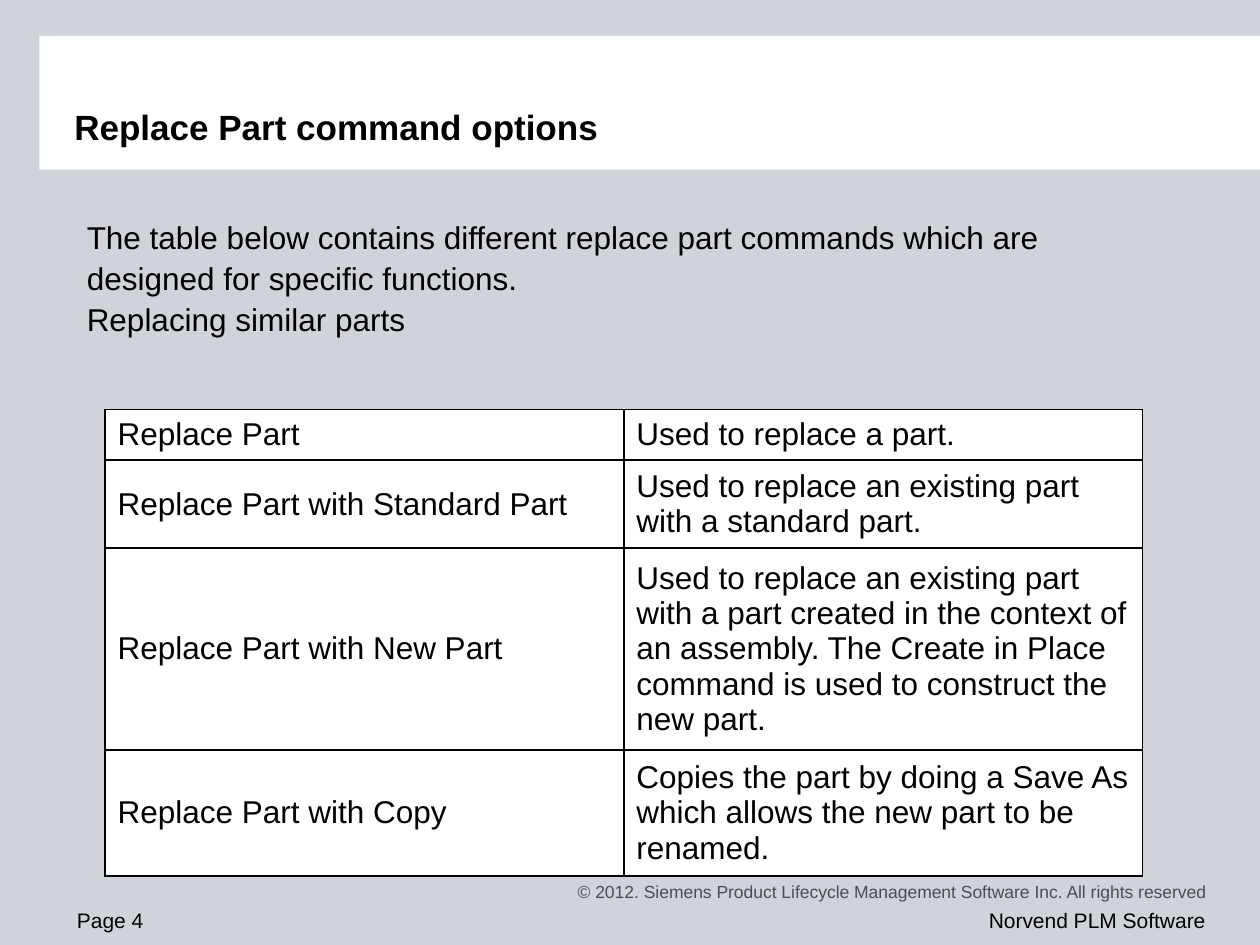
from lxml import etree
from pptx import Presentation
from pptx.dml.color import RGBColor
from pptx.enum import shapes, text
from pptx.oxml import ns
from pptx.util import Pt

BACKGROUND = RGBColor(0xD0, 0xD3, 0xDA)
BAND = RGBColor(0xFE, 0xFF, 0xFF)
WHITE = RGBColor(0xFF, 0xFF, 0xFF)
BLACK = RGBColor(0, 0, 0)
SLATE = RGBColor(0x46, 0x4F, 0x59)

INTRO = [
    "The table below contains different replace part commands which are designed for specific functions.",
    "Replacing similar parts",
]
COMMANDS = [
    ("Replace Part", "Used to replace a part.", 27.5),
    ("Replace Part with Standard Part",
     "Used to replace an existing part with a standard part.", 47.5),
    ("Replace Part with New Part",
     "Used to replace an existing part with a part created in the context of an assembly. "
     "The Create in Place command is used to construct the new part.", 108),
    ("Replace Part with Copy",
     "Copies the part by doing a Save As which allows the new part to be renamed.", 67.5),
]


def style(paragraph, size, color=BLACK, bold=False):
    """Set the font of a whole paragraph."""
    font = paragraph.font
    font.name, font.size, font.bold = "Arial", Pt(size), bold
    font.color.rgb = color


def add_text(slide, box, lines, size, color=BLACK, bold=False, inset=(0, 0),
             anchor=text.MSO_ANCHOR.BOTTOM, align=text.PP_ALIGN.LEFT, spacing=1.0):
    """Add a wrapped text box with one paragraph for each line."""
    frame = slide.shapes.add_textbox(*map(Pt, box)).text_frame
    frame.word_wrap = True
    frame.vertical_anchor = anchor
    frame.margin_left = frame.margin_right = Pt(inset[0])
    frame.margin_top = frame.margin_bottom = Pt(inset[1])
    frame.text = "\n".join(lines)
    for paragraph in frame.paragraphs:
        paragraph.alignment = align
        paragraph.line_spacing = spacing
        style(paragraph, size, color, bold)


def add_header(slide, left, top, width, height):
    """Add the white band and the title on it."""
    band = slide.shapes.add_shape(
        shapes.MSO_SHAPE.RECTANGLE, Pt(left), Pt(top), Pt(width), Pt(height))
    band.shadow.inherit = False
    band.fill.solid()
    band.fill.fore_color.rgb = BAND
    band.line.fill.background()
    add_text(slide, (left + 20, top + 0.5, 484, 63.5),
             ["Replace Part command options"], 20, bold=True)


def add_borders(cell):
    """Draw a black line on the four sides of a cell."""
    properties = cell._tc.get_or_add_tcPr()
    for index, side in enumerate(("lnL", "lnR", "lnT", "lnB")):
        line = etree.Element(ns.qn(f"a:{side}"), w=str(Pt(1)))
        fill = etree.SubElement(line, ns.qn("a:solidFill"))
        etree.SubElement(fill, ns.qn("a:srgbClr"), val=str(BLACK))
        properties.insert(index, line)


def add_command_table(slide, left, top, width):
    """Add the table of commands and their uses."""
    heights = [height for *_, height in COMMANDS]
    frame = slide.shapes.add_table(
        len(COMMANDS), 2, Pt(left), Pt(top), Pt(width), Pt(sum(heights)))
    table = frame.table
    table.first_row = table.horz_banding = False
    for column in table.columns:
        column.width = Pt(width / 2)
    for row, (*words, height) in zip(table.rows, COMMANDS):
        row.height = Pt(height)
        for cell, word in zip(row.cells, words):
            cell.text = word
            cell.vertical_anchor = text.MSO_ANCHOR.MIDDLE
            cell.fill.solid()
            cell.fill.fore_color.rgb = WHITE
            style(cell.text_frame.paragraphs[0], 18)
            add_borders(cell)


def add_footer(slide, left, top, width):
    """Add the copyright line above the page number and the company name."""
    right = text.PP_ALIGN.RIGHT
    height, step = 21.6, 17.3
    add_text(slide, (left, top, width, height),
             ["© 2012. Siemens Product Lifecycle Management Software Inc. All rights reserved"],
             10, SLATE, align=right)
    add_text(slide, (left, top + step, 69, height), ["Page 4"], 12)
    add_text(slide, (left + width - 287, top + step, 287, height),
             ["Norvend PLM Software"], 12, align=right)


def main():
    """Build the slide and save it."""
    presentation = Presentation()
    presentation.slide_width, presentation.slide_height = Pt(720), Pt(540)
    slide = presentation.slides.add_slide(presentation.slide_layouts[6])
    slide.background.fill.solid()
    slide.background.fill.fore_color.rgb = BACKGROUND
    add_header(slide, 22.5, 20.5, 697.5, 76.5)
    add_text(slide, (42.5, 121.7, 617.8, 72.7), INTRO, 18, inset=(7.2, 3.6),
             anchor=text.MSO_ANCHOR.MIDDLE, spacing=1.08)
    add_command_table(slide, 60, 234, 593)
    add_footer(slide, 44, 494, 645)
    presentation.save("out.pptx")


if __name__ == "__main__":
    main()
